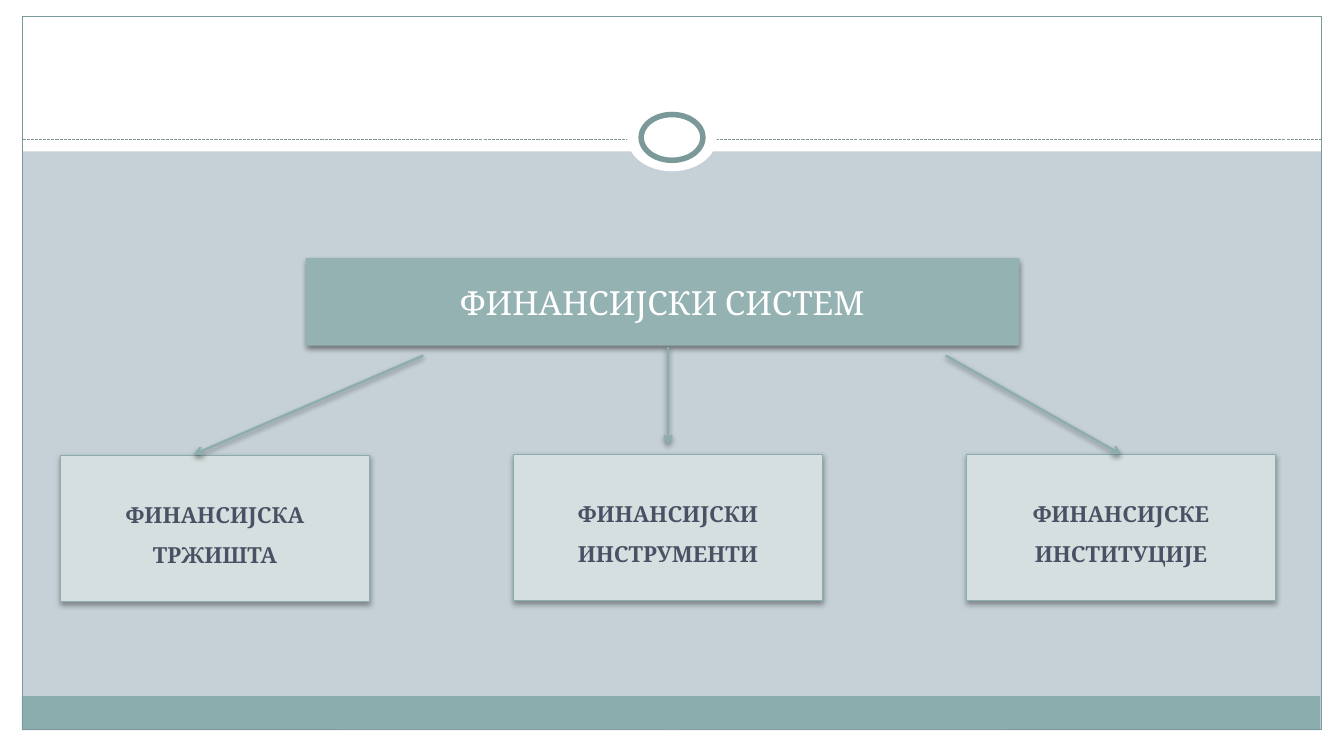
from lxml.etree import SubElement
from pptx import Presentation
from pptx.dml.color import RGBColor as RGB
from pptx.enum.dml import MSO_LINE as Dash
from pptx.enum.shapes import MSO_CONNECTOR as Conn, MSO_SHAPE as Shape
from pptx.enum.text import MSO_ANCHOR as Anchor, PP_ALIGN as Align
from pptx.oxml.ns import qn
from pptx.util import Inches, Pt

HUE = {"back": "C5D1D7", "white": "FFFFFF", "teal": "8CADAE", "edge": "7C999A",
       "head": "95B2B3", "pale": "D5DFDF", "ink": "4B5064", "black": "000000"}
hue = {name: RGB.from_string(code) for name, code in HUE.items()}

deck = Presentation()
deck.slide_width, deck.slide_height = Inches(13.5), Inches(7.5)
slide = deck.slides.add_slide(deck.slide_layouts[6])
slide.background.fill.solid()
slide.background.fill.fore_color.rgb = hue["back"]


def add_box(kind, place, fill=None, line=None, width=0.75):
    box = slide.shapes.add_shape(kind, *[Inches(n) for n in place])
    box.shadow.inherit = False
    if fill:
        box.fill.solid()
        box.fill.fore_color.rgb = hue[fill]
    else:
        box.fill.background()
    if line:
        box.line.color.rgb = hue[line]
        box.line.width = Pt(width)
    else:
        box.line.fill.background()
    return box


def add_shade(item, alpha):
    props = item._element.spPr
    effects = props.find(qn("a:effectLst"))
    if effects is None:
        effects = SubElement(props, qn("a:effectLst"))
    shade = SubElement(effects, qn("a:outerShdw"), blurRad=str(Pt(4)),
                       dist=str(Pt(2)), dir="5400000", rotWithShape="0")
    color = SubElement(shade, qn("a:srgbClr"), val=HUE["black"])
    SubElement(color, qn("a:alpha"), val=str(alpha * 1000))


# White margins, bottom band and frame
for place in [(0, 7.33, 13.5, 0.17), (0, 0, 13.5, 1.52),
              (0, 0, 0.23, 7.5), (13.28, 0, 0.23, 7.5)]:
    add_box(Shape.RECTANGLE, place, "white")
add_box(Shape.RECTANGLE, (0.22, 6.99, 13.04, 0.34), "teal")
add_box(Shape.RECTANGLE, (0.23, 0.17, 13.04, 7.16), line="edge")

# Dashed rule with the ring on it
rule = slide.shapes.add_connector(Conn.STRAIGHT, Inches(0.23), Inches(1.4),
                                  Inches(13.27), Inches(1.4))
rule.line.color.rgb = hue["edge"]
rule.line.width = Pt(0.75)
rule.line.dash_style = Dash.SQUARE_DOT
SubElement(rule._element.spPr, qn("a:effectLst"))
add_box(Shape.OVAL, (6.3, 1.05, 0.9, 0.67), "white")
add_box(Shape.OVAL, (6.44, 1.15, 0.62, 0.46), "white", "edge", 4)

# Head box and its three parts
boxes = []
for text, place, fill, line, alpha, size, ink, bold, gap in [
    ("ФИНАНСИЈСКИ СИСТЕМ", (3.07, 2.59, 7.17, 0.88), "head", None, 45, 24, "white", False, 1),
    ("ФИНАНСИЈСКА ТРЖИШТА", (0.61, 4.57, 3.1, 1.47), "pale", "teal", 35, 16, "ink", True, 1.5),
    ("ФИНАНСИЈСКИ ИНСТРУМЕНТИ", (5.16, 4.56, 3.1, 1.47), "pale", "teal", 35, 16, "ink", True, 1.5),
    ("ФИНАНСИЈСКЕ ИНСТИТУЦИЈЕ", (9.71, 4.56, 3.1, 1.47), "pale", "teal", 35, 16, "ink", True, 1.5),
]:
    box = add_box(Shape.RECTANGLE, place, fill, line)
    add_shade(box, alpha)
    frame = box.text_frame
    frame.word_wrap = True
    frame.vertical_anchor = Anchor.MIDDLE
    para = frame.paragraphs[0]
    para.alignment = Align.CENTER
    para.line_spacing = gap
    run = para.add_run()
    run.text = text
    run.font.name = "Cambria"
    run.font.size = Pt(size)
    run.font.bold = bold
    run.font.color.rgb = hue[ink]
    boxes.append(box)

# Arrows from the head box to the parts
for ends, goal in [((4.25, 3.57, 1.95, 4.56), None),
                   ((6.71, 3.48, 6.71, 4.46), None),
                   ((9.5, 3.57, 11.26, 4.56), boxes[3])]:
    arrow = slide.shapes.add_connector(Conn.STRAIGHT, *[Inches(n) for n in ends])
    if goal:
        arrow.end_connect(goal, 0)
    arrow.line.color.rgb = hue["teal"]
    arrow.line.width = Pt(1.57)
    SubElement(arrow.line._get_or_add_ln(), qn("a:tailEnd"), type="arrow")
    add_shade(arrow, 45)

deck.save("out.pptx")
